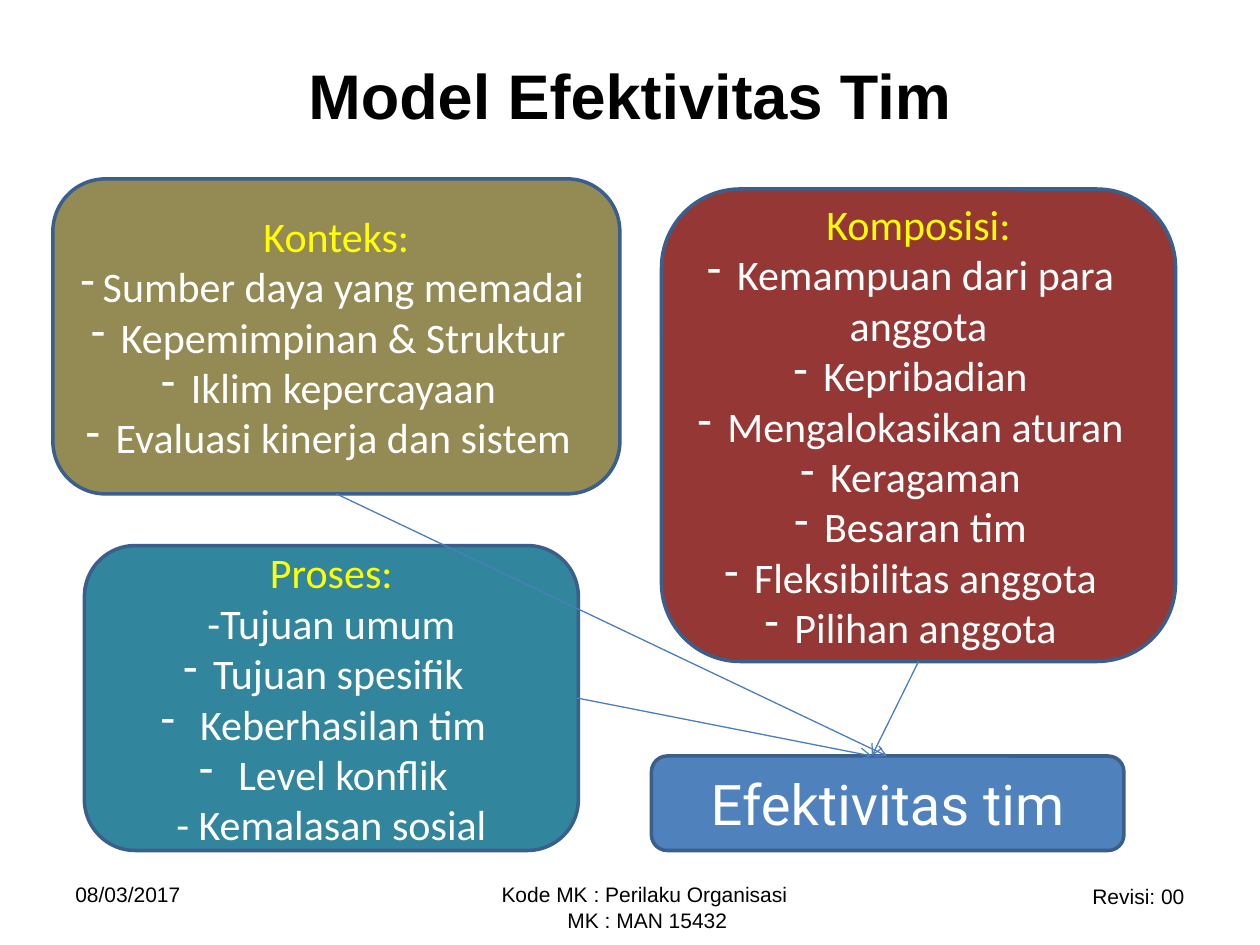
from dataclasses import dataclass

from lxml.etree import SubElement
from pptx import Presentation
from pptx.dml.color import RGBColor
from pptx.enum.shapes import MSO_CONNECTOR, MSO_SHAPE
from pptx.enum.text import MSO_ANCHOR, PP_ALIGN
from pptx.oxml.ns import qn
from pptx.util import Inches, Pt


@dataclass(frozen=True)
class Theme:
    black: str = "000000"
    white: str = "FFFFFF"
    heading: str = "FFFF00"
    olive: str = "948A54"
    red: str = "953735"
    teal: str = "31859C"
    blue: str = "4F81BD"
    outline: str = "3A5F8C"
    arrow: str = "4B7EBC"
    title_size: int = 36
    result_size: int = 32
    body_size: int = 24
    footer_size: int = 12
    title_font: str = "Arial"
    body_font: str = "Calibri"
    result_font: str = "Roboto"


T = Theme()


@dataclass(frozen=True)
class Line:
    text: str
    color: str = T.white
    bullet: bool = False


@dataclass(frozen=True)
class Box:
    at: tuple[float, float, float, float]
    fill: str
    lines: list[Line]
    size: int = T.body_size
    font: str = T.body_font


@dataclass(frozen=True)
class Label:
    at: tuple[float, float, float, float]
    lines: list[Line]
    align: PP_ALIGN
    size: int = T.footer_size
    bold: bool = False
    anchor: MSO_ANCHOR = MSO_ANCHOR.TOP


def bullets(*texts: str) -> list[Line]:
    return [Line(text, bullet=True) for text in texts]


def write(tf, lines: list[Line], align: PP_ALIGN, anchor: MSO_ANCHOR, **fmt) -> None:
    tf.word_wrap = True
    tf.vertical_anchor = anchor
    for i, line in enumerate(lines):
        p = tf.paragraphs[0] if i == 0 else tf.add_paragraph()
        p.alignment = align
        if line.bullet:
            pPr = p._p.get_or_add_pPr()
            SubElement(pPr, qn("a:buFontTx"))
            SubElement(pPr, qn("a:buChar")).set("char", "-")
        r = p.add_run()
        r.text = line.text
        for name, value in fmt.items():
            setattr(r.font, name, value)
        r.font.color.rgb = RGBColor.from_string(line.color)


def add_label(s, label: Label) -> None:
    sp = s.shapes.add_textbox(*map(Inches, label.at))
    fmt = {"name": T.title_font, "size": Pt(label.size), "bold": label.bold}
    write(sp.text_frame, label.lines, label.align, label.anchor, **fmt)


def add_box(s, box: Box) -> None:
    sp = s.shapes.add_shape(MSO_SHAPE.ROUNDED_RECTANGLE, *map(Inches, box.at))
    sp.shadow.inherit = False
    sp.fill.solid()
    sp.fill.fore_color.rgb = RGBColor.from_string(box.fill)
    sp.line.color.rgb = RGBColor.from_string(T.outline)
    sp.line.width = Pt(2)
    fmt = {"name": box.font, "size": Pt(box.size)}
    write(sp.text_frame, box.lines, PP_ALIGN.CENTER, MSO_ANCHOR.MIDDLE, **fmt)


def add_arrow(s, start: tuple[float, float], end: tuple[float, float]) -> None:
    c = s.shapes.add_connector(MSO_CONNECTOR.STRAIGHT, *map(Inches, start + end))
    c.line.color.rgb = RGBColor.from_string(T.arrow)
    c.line.width = Pt(0.75)
    SubElement(c.line._get_or_add_ln(), qn("a:tailEnd")).set("type", "arrow")
    SubElement(c._element.spPr, qn("a:effectLst"))


# Title and footer
LABELS = [
    Label((0.5, 0.33, 9, 0.83), [Line("Model Efektivitas Tim", T.black)],
          PP_ALIGN.CENTER, T.title_size, True, MSO_ANCHOR.MIDDLE),
    Label((0.5, 6.95, 2.33, 0.4), [Line("08/03/2017", T.black)], PP_ALIGN.LEFT),
    Label((3.42, 6.95, 3.39, 0.4),
          [Line("Kode MK : Perilaku Organisasi", T.black),
           Line(" MK : MAN 15432", T.black)], PP_ALIGN.CENTER),
    Label((7.17, 6.96, 2.33, 0.3), [Line("Revisi: 00", T.black)], PP_ALIGN.RIGHT),
]

# Three factors and their result
BOXES = [
    Box((0.42, 1.42, 4.5, 2.5), T.olive,
        [Line("Konteks:", T.heading)]
        + bullets("Sumber daya yang memadai", "Kepemimpinan & Struktur",
                  "Iklim kepercayaan", "Evaluasi kinerja dan sistem")),
    Box((5.25, 1.5, 4.08, 3.75), T.red,
        [Line("Komposisi:", T.heading)]
        + bullets("Kemampuan dari para anggota", "Kepribadian",
                  "Mengalokasikan aturan", "Keragaman", "Besaran tim",
                  "Fleksibilitas anggota", "Pilihan anggota")),
    Box((0.67, 4.33, 3.92, 2.42), T.teal,
        [Line("Proses:", T.heading), Line("-Tujuan umum")]
        + bullets("Tujuan spesifik", " Keberhasilan tim", " Level konflik")
        + [Line("- Kemalasan sosial")]),
    Box((5.17, 6, 3.75, 0.75), T.blue, [Line("Efektivitas tim")],
        T.result_size, T.result_font),
]

# Arrows from each factor to the result
ARROWS = [
    ((2.67, 3.92), (7.04, 6)),
    ((4.58, 5.54), (6.92, 6)),
    ((7.29, 5.25), (6.92, 6)),
]


def main() -> None:
    prs = Presentation()
    prs.slide_width, prs.slide_height = Inches(10), Inches(7.5)
    s = prs.slides.add_slide(prs.slide_layouts[6])
    for label in LABELS:
        add_label(s, label)
    for box in BOXES:
        add_box(s, box)
    for start, end in ARROWS:
        add_arrow(s, start, end)
    prs.save("out.pptx")


if __name__ == "__main__":
    main()
